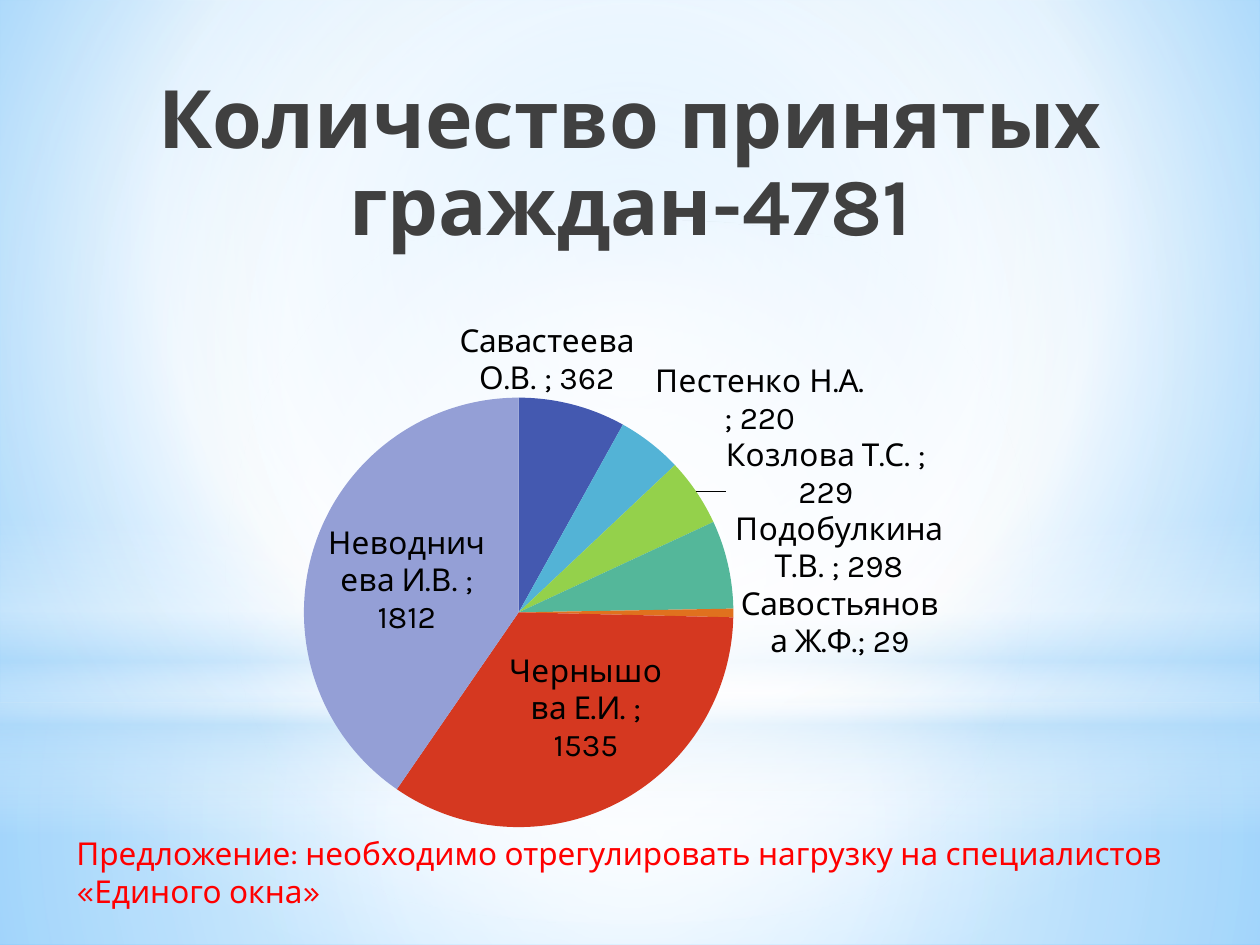
from lxml.etree import SubElement
from pptx import Presentation
from pptx.chart.data import CategoryChartData
from pptx.dml.color import RGBColor
from pptx.enum.chart import XL_CHART_TYPE, XL_LABEL_POSITION
from pptx.enum.shapes import MSO_SHAPE
from pptx.enum.text import MSO_ANCHOR, PP_ALIGN
from pptx.oxml import parse_xml
from pptx.oxml.ns import nsdecls, qn
from pptx.util import Emu, Pt

FONT = "Karla"
COLORS = {
    "white": "FFFFFF", "pale": "B4DCFA", "sky": "9ED5FF", "azure": "5BB9FF",
    "title": "404040", "label": "000000", "note": "FF0000",
}
VISITORS = [
    ("Савастеева О.В. ", 362, "4459B0"),
    ("Пестенко Н.А. ", 220, "53B3D6"),
    ("Козлова Т.С. ", 229, "94D14B"),
    ("Подобулкина Т.В. ", 298, "54B79A"),
    ("Савостьянова Ж.Ф.", 29, "E0711E"),
    ("Чернышова Е.И. ", 1535, "D53820"),
    ("Неводничева И.В. ", 1812, "949FD6"),
]
CENTER = (50, 50, 50, 50)
GLOWS = [
    (MSO_SHAPE.RECTANGLE, (0, 703, 1260, 242),
     [(0, "white", 91), (37, "white", 76), (100, "pale", 79)], CENTER),
    (MSO_SHAPE.RECTANGLE, (0, 0, 1260, 703),
     [(0, "white", 89), (48, "white", 62), (100, "pale", 79)], CENTER),
    (MSO_SHAPE.RECTANGLE, (0, 519, 1260, 315),
     [(0, "white", 0), (29, "white", 30), (45, "pale", 40),
      (55, "white", 26), (65, "pale", 60), (100, "white", 0)], None),
    (MSO_SHAPE.OVAL, (0, 220, 1260, 703),
     [(0, "white", 100), (56, "white", 0)], CENTER),
]


def px(n):
    """Turn pixels into EMU."""
    return Emu(round(n * 914400 / 126))


def rgb(name):
    """Look up a named colour."""
    return RGBColor.from_string(COLORS[name])


def set_gradient(fill, owner, stops, focus):
    """Give a fill a circular gradient, or a vertical one without a focus."""
    fill.gradient()
    grad = owner.find(".//" + qn("a:gradFill"))
    for child in list(grad):
        grad.remove(child)
    gs_list = SubElement(grad, qn("a:gsLst"))
    for pos, color, alpha in stops:
        gs = SubElement(gs_list, qn("a:gs"), pos=str(pos * 1000))
        clr = SubElement(gs, qn("a:srgbClr"), val=COLORS[color])
        SubElement(clr, qn("a:alpha"), val=str(alpha * 1000))
    if focus:
        circle = SubElement(grad, qn("a:path"), path="circle")
        SubElement(circle, qn("a:fillToRect"),
                   {side: str(v * 1000) for side, v in zip("ltrb", focus)})
    else:
        SubElement(grad, qn("a:lin"), ang="5400000", scaled="0")


def add_glow(slide, kind, box, stops, focus):
    """Add a translucent background shape."""
    sp = slide.shapes.add_shape(kind, *map(px, box))
    sp.shadow.inherit = False
    sp.line.fill.background()
    set_gradient(sp.fill, sp._element.spPr, stops, focus)


def add_text(slide, box, text, size, color, bold=False, align=PP_ALIGN.LEFT):
    """Add a wrapped text box with one paragraph."""
    tf = slide.shapes.add_textbox(*map(px, box)).text_frame
    tf.word_wrap = True
    tf.vertical_anchor = MSO_ANCHOR.TOP
    p = tf.paragraphs[0]
    p.text = text
    p.alignment = align
    p.font.name, p.font.size, p.font.bold = FONT, Pt(size), bold
    p.font.color.rgb = rgb(color)
    return tf


def add_pie(slide, box):
    """Add the pie of visitors with name and value labels."""
    data = CategoryChartData()
    data.categories = [name for name, _, _ in VISITORS]
    data.add_series("Series 1", [value for _, value, _ in VISITORS])
    chart = slide.shapes.add_chart(XL_CHART_TYPE.PIE, *map(px, box), data).chart
    chart.has_legend = chart.has_title = False
    chart.font.name, chart.font.size = FONT, Pt(18)
    chart.font.color.rgb = rgb("label")
    plot = chart.plots[0]
    plot.vary_by_categories = True
    for i, (_, _, color) in enumerate(VISITORS):
        fill = plot.series[0].points[i].format.fill
        fill.solid()
        fill.fore_color.rgb = RGBColor.from_string(color)
    labels = plot.series[0].data_labels
    labels.show_category_name = labels.show_value = True
    labels.show_percentage = False
    labels.position = XL_LABEL_POSITION.BEST_FIT
    dlbls = labels._element
    for tag in ("c:separator", "c:showLeaderLines"):
        for old in dlbls.findall(qn(tag)):
            dlbls.remove(old)
    SubElement(dlbls, qn("c:separator")).text = "; "
    SubElement(dlbls, qn("c:showLeaderLines"), val="1")
    area = chart._chartSpace.chart.plotArea
    for old in area.findall(qn("c:layout")):
        area.remove(old)
    area.insert(0, parse_xml(
        f'<c:layout {nsdecls("c")}><c:manualLayout><c:layoutTarget val="inner"/>'
        '<c:xMode val="edge"/><c:yMode val="edge"/><c:x val="0.29"/>'
        '<c:y val="0.155"/><c:w val="0.41"/><c:h val="0.71"/>'
        '</c:manualLayout></c:layout>'))


def main():
    """Build the slide and save it."""
    prs = Presentation()
    prs.slide_width, prs.slide_height = px(1260), px(945)
    slide = prs.slides.add_slide(prs.slide_layouts[6])
    set_gradient(slide.background.fill, slide._element,
                 [(0, "sky", 100), (60, "white", 100), (100, "azure", 100)],
                 (20, 10, 20, 60))
    for glow in GLOWS:
        add_glow(slide, *glow)
    title = add_text(slide, (84, 66, 1092, 189), "Количество принятых граждан-4781",
                     46, "title", bold=True, align=PP_ALIGN.CENTER)
    title.margin_top = px(13)
    title.paragraphs[0].line_spacing = 0.9
    add_pie(slide, (0, 304, 1048, 605))
    add_text(slide, (64, 828, 1111, 89),
             "Предложение: необходимо отрегулировать нагрузку на специалистов «Единого окна»",
             18, "note")
    prs.save("out.pptx")


if __name__ == "__main__":
    main()
